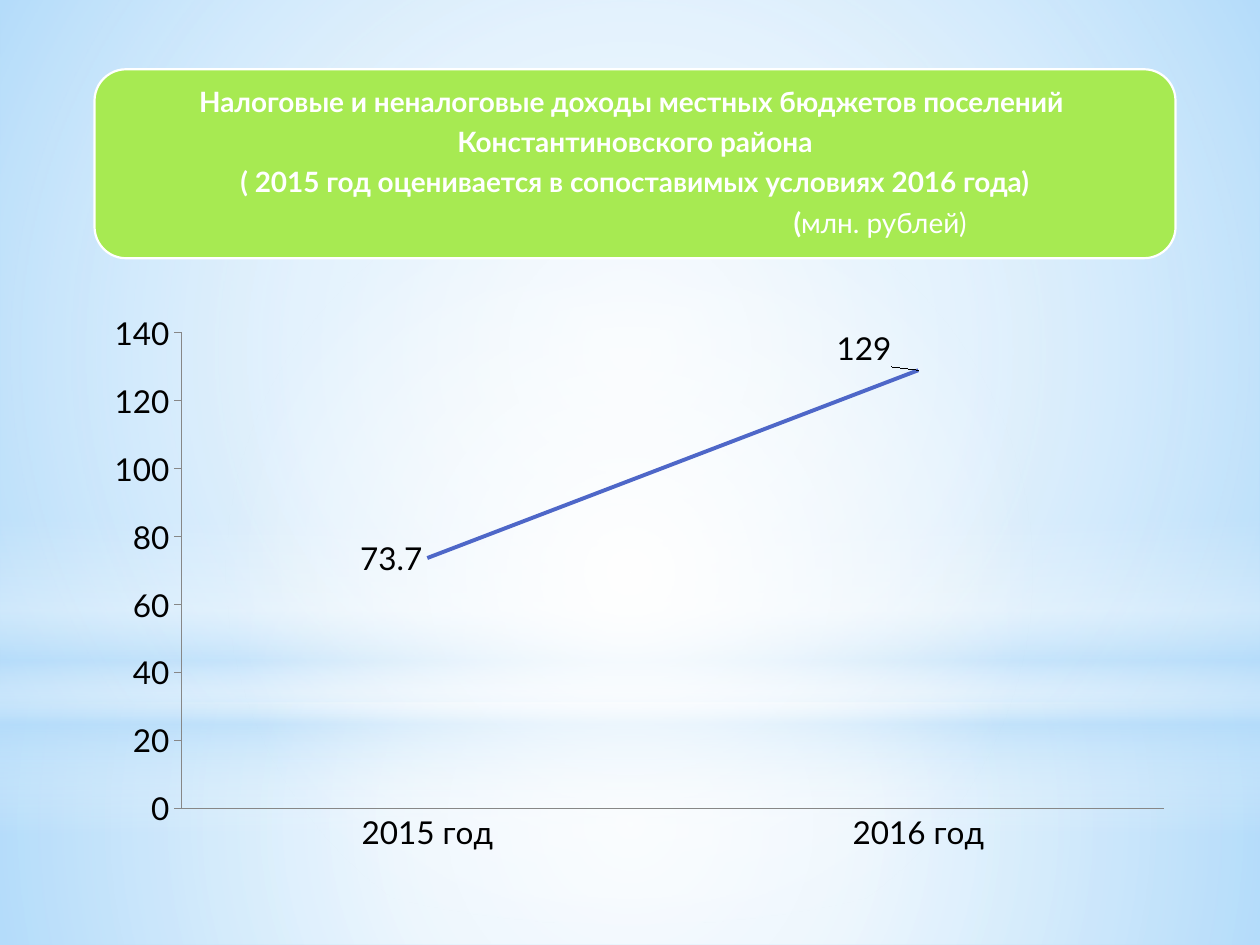
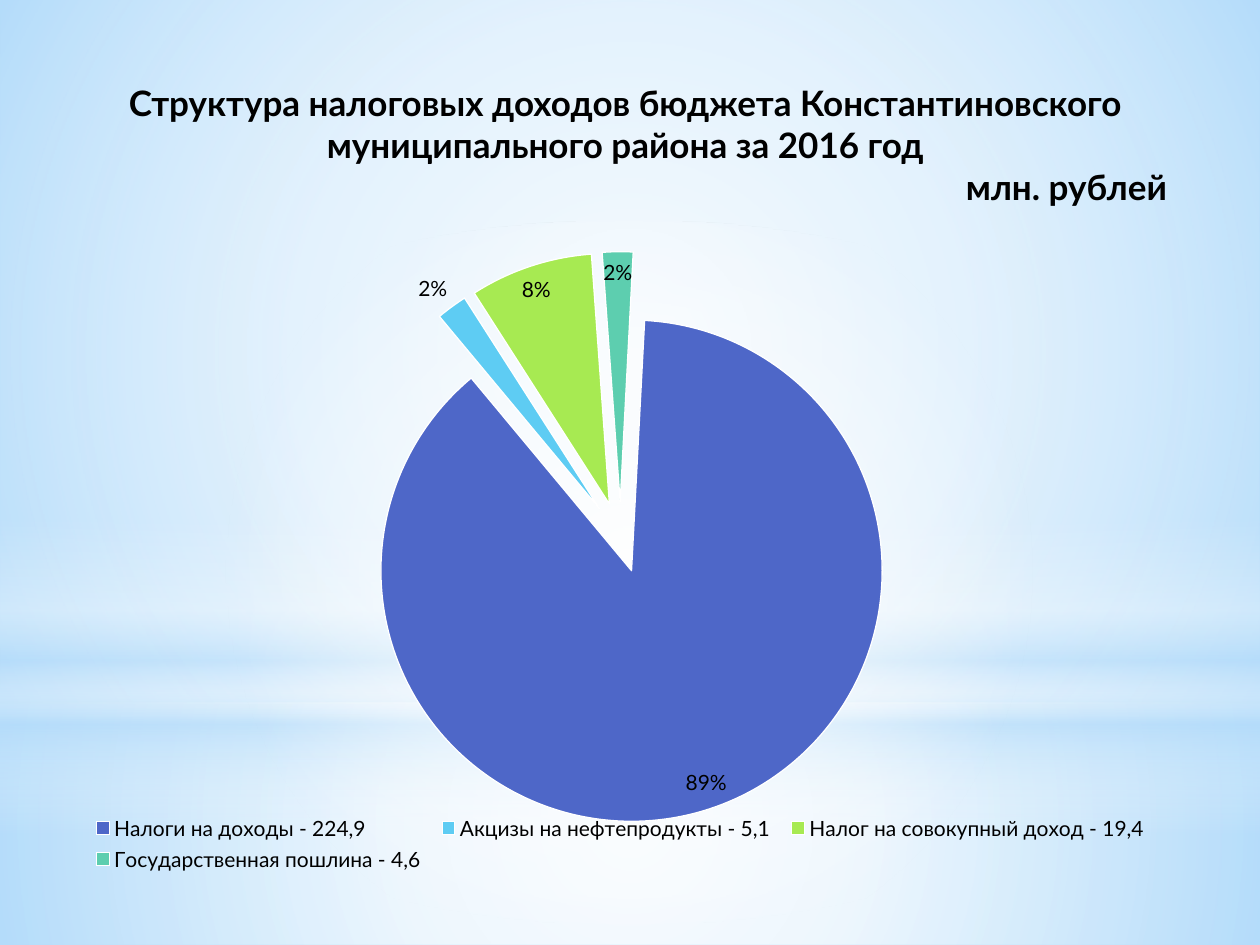
from pptx import Presentation
from pptx.chart.data import CategoryChartData
from pptx.dml.color import RGBColor
from pptx.enum.chart import XL_CHART_TYPE, XL_LABEL_POSITION, XL_LEGEND_POSITION, XL_TICK_MARK
from pptx.enum.shapes import MSO_SHAPE
from pptx.enum.text import MSO_ANCHOR, PP_ALIGN
from pptx.oxml import parse_xml
from pptx.oxml.ns import nsdecls, qn
from pptx.util import Pt

LINE, PIE = XL_CHART_TYPE.LINE, XL_CHART_TYPE.PIE
LEFT, BEST = XL_LABEL_POSITION.LEFT, XL_LABEL_POSITION.BEST_FIT
BOTTOM = XL_LEGEND_POSITION.BOTTOM
NONE, OUTER = XL_TICK_MARK.NONE, XL_TICK_MARK.OUTSIDE
RECT, OVAL, ROUND = MSO_SHAPE.RECTANGLE, MSO_SHAPE.OVAL, MSO_SHAPE.ROUNDED_RECTANGLE
MIDDLE, CENTER = MSO_ANCHOR.MIDDLE, PP_ALIGN.CENTER

SCALE = 9144
FONT = "Lato"
WHITE, BLACK, GRAY = "FFFFFF", "000000", "878787"
SKY, BLUE, CYAN, LIME, TEAL = "B4DCFA", "4E67C8", "5ECCF3", "A7EA52", "5DCEAF"

GLOWS = [
    (RECT, (0, 558, 1000, 192), [(0, WHITE, 91), (37, WHITE, 76), (100, SKY, 79)], None),
    (RECT, (0, 0, 1000, 558), [(0, WHITE, 89), (48, WHITE, 62), (100, SKY, 79)], None),
    (RECT, (0, 412, 1000, 250), [(0, WHITE, 0), (29, WHITE, 30), (45, SKY, 40),
                                 (55, WHITE, 26), (65, SKY, 60), (100, WHITE, 0)], 90),
    (OVAL, (0, 175, 1000, 558), [(0, WHITE, 100), (56, WHITE, 0)], None),
]


def px(*vals):
    return [val * SCALE for val in vals]


def rgb(code):
    return RGBColor.from_string(code)


def paint(fill, code):
    fill.solid()
    fill.fore_color.rgb = rgb(code)


def style(font, size, color=BLACK, bold=False):
    font.name = FONT
    font.size = Pt(size)
    font.bold = bold
    font.color.rgb = rgb(color)


def form(slide, kind, box):
    shape = slide.shapes.add_shape(kind, *px(*box))
    shape.shadow.inherit = False
    shape.line.fill.background()
    return shape


def blend(shape, stops, angle):
    marks = "".join(
        f'<a:gs pos="{pos * 1000}"><a:srgbClr val="{code}">'
        f'<a:alpha val="{alpha * 1000}"/></a:srgbClr></a:gs>'
        for pos, code, alpha in stops)
    if angle is None:
        course = ('<a:path path="circle"><a:fillToRect l="50000" t="50000" '
                  'r="50000" b="50000"/></a:path>')
    else:
        course = f'<a:lin ang="{angle * 60000}" scaled="0"/>'
    shape.fill.background()
    props = shape._element.spPr
    props.replace(props.find(qn("a:noFill")), parse_xml(
        f'<a:gradFill {nsdecls("a")} rotWithShape="1"><a:gsLst>{marks}</a:gsLst>{course}</a:gradFill>'))


def page(deck):
    slide = deck.slides.add_slide(deck.slide_layouts[6])
    for kind, box, stops, angle in GLOWS:
        blend(form(slide, kind, box), stops, angle)
    return slide


def write(frame, lines, size=18, color=BLACK, space=1.0, after=0, shift=0):
    frame.word_wrap = True
    for index, runs in enumerate(lines):
        para = frame.paragraphs[0] if index == 0 else frame.add_paragraph()
        para.alignment = CENTER
        para.line_spacing = space
        para.space_after = Pt(after)
        for text, bold in runs:
            run = para.add_run()
            run.text = text
            style(run.font, size, color, bold)
    para._p.get_or_add_pPr().set("marL", str(shift * SCALE))


def place(**parts):
    tags = "".join(f'<c:{key} val="{val}"/>' for key, val in parts.items())
    return parse_xml(f'<c:layout {nsdecls("c")}><c:manualLayout>{tags}</c:manualLayout></c:layout>')


def graph(slide, kind, box, names, vals, plot):
    data = CategoryChartData()
    data.categories = names
    data.add_series("Series 1", vals)
    chart = slide.shapes.add_chart(kind, *px(*box), data).chart
    style(chart.font, 18)
    chart.has_title = False
    chart.has_legend = False
    area = chart._chartSpace.chart.plotArea
    for old in area.findall(qn("c:layout")):
        area.remove(old)
    x, y, w, h = plot
    area.insert(0, place(layoutTarget="inner", xMode="edge", yMode="edge", x=x, y=y, w=w, h=h))
    return chart, chart.plots[0].series[0]


def unlead(labels):
    labels._element.append(parse_xml(
        f'<c:extLst {nsdecls("c")}><c:ext uri="{{CE6537A1-D6FC-4f65-9D91-7224C49458BB}}" '
        'xmlns:c15="http://schemas.microsoft.com/office/drawing/2012/chart">'
        '<c15:showLeaderLines val="0"/></c:ext></c:extLst>'))


def trend(slide):
    chart, series = graph(slide, LINE, (75, 242, 866, 444), ["2015 год", "2016 год"],
                          [73.7, 129], (0.08, 0.05, 0.9, 0.85))
    chart.plots[0].vary_by_categories = False
    series.smooth = False
    series.format.line.color.rgb = rgb(BLUE)
    series.format.line.width = Pt(2.25)
    for axis, tick in ((chart.category_axis, NONE), (chart.value_axis, OUTER)):
        axis.has_major_gridlines = False
        axis.major_tick_mark = tick
        axis.minor_tick_mark = NONE
        axis.format.line.color.rgb = rgb(GRAY)
        style(axis.tick_labels.font, 18)
    scale = chart.value_axis
    scale.minimum_scale, scale.maximum_scale, scale.major_unit = 0, 140, 20
    labels = series.data_labels
    labels.show_value = True
    labels.position = LEFT
    style(labels.font, 18)
    last = series.points[1].data_label
    last.position = LEFT
    style(last.font, 18)
    mark = labels._element.find(qn("c:dLbl"))
    mark.find(qn("c:idx")).addnext(place(x=-0.02, y=-0.04))
    unlead(labels)


def shares(slide):
    names = ["Налоги на доходы - 224,9", "Акцизы на нефтепродукты - 5,1",
             "Налог на совокупный доход - 19,4", "Государственная пошлина - 4,6"]
    chart, series = graph(slide, PIE, (28, 162, 929, 540), names,
                          [89, 2, 8, 2], (0.25, 0.07, 0.5, 0.84))
    pie = chart.plots[0]
    pie.vary_by_categories = True
    series._element.find(qn("c:tx")).addnext(
        parse_xml(f'<c:explosion {nsdecls("c")} val="14"/>'))
    for index, code in enumerate((BLUE, CYAN, LIME, TEAL)):
        look = series.points[index].format
        paint(look.fill, code)
        look.line.color.rgb = rgb(WHITE)
        look.line.width = Pt(0.75)
    labels = series.data_labels
    labels.show_value = True
    labels.show_percentage = False
    labels.number_format = '0"%"'
    labels.number_format_is_linked = False
    labels.position = BEST
    style(labels.font, 12)
    for old in pie._element.findall(qn("c:firstSliceAng")):
        pie._element.remove(old)
    pie._element.append(parse_xml(f'<c:firstSliceAng {nsdecls("c")} val="3"/>'))
    chart.has_legend = True
    legend = chart.legend
    legend.position = BOTTOM
    legend.include_in_layout = False
    style(legend.font, 12)
    for old in legend._element.findall(qn("c:layout")):
        legend._element.remove(old)
    legend._element.find(qn("c:legendPos")).addnext(
        place(xMode="edge", yMode="edge", x=0.04, y=0.89, w=0.92, h=0.1))


def banner(slide):
    shape = form(slide, ROUND, (75, 55, 858, 150))
    paint(shape.fill, LIME)
    shape.line.color.rgb = rgb(WHITE)
    shape.line.width = Pt(1.25)
    frame = shape.text_frame
    frame.vertical_anchor = MIDDLE
    frame.margin_left, frame.margin_top, frame.margin_right, frame.margin_bottom = px(7, 0, 7, 0)
    write(frame, [
        [("Налоговые и неналоговые доходы местных бюджетов поселений ", True)],
        [("Константиновского района", True)],
        [("( 2015 год оценивается в сопоставимых условиях 2016 года)", True)],
        [("(", True), ("млн. рублей)", False)],
    ], size=16, color=WHITE, space=0.9, after=5.8, shift=389)


def title(slide):
    box = slide.shapes.add_textbox(*px(20, 60, 953, 111))
    write(box.text_frame, [
        [("Структура налоговых доходов бюджета Константиновского", True)],
        [("муниципального района за 2016 год", True)],
        [("млн. рублей", True)],
    ], size=20, shift=700)


def main():
    deck = Presentation()
    deck.slide_width, deck.slide_height = px(1000, 750)
    paint(deck.slide_master.background.fill, SKY)
    first = page(deck)
    banner(first)
    trend(first)
    second = page(deck)
    title(second)
    shares(second)
    deck.save("out.pptx")


if __name__ == "__main__":
    main()
